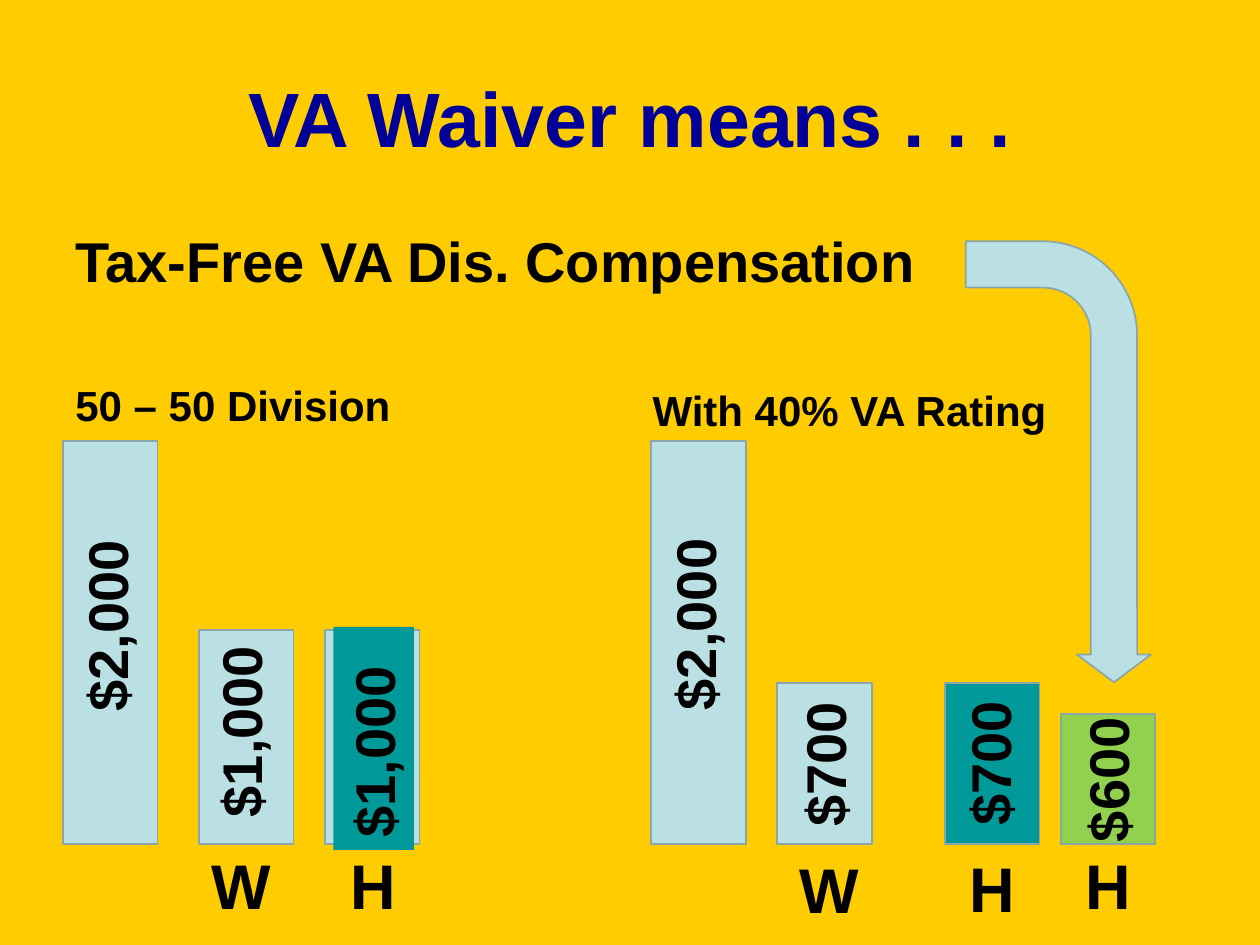
from typing import NamedTuple, Optional

from pptx import Presentation
from pptx.dml.color import RGBColor as Color
from pptx.enum.shapes import MSO_SHAPE as Kind
from pptx.enum.text import MSO_ANCHOR as Anchor, MSO_AUTO_SIZE as Fit, PP_ALIGN as Align
from pptx.util import Pt


class Theme:
    font = "Arial"
    back = Color.from_string("FFCC00")
    title = Color.from_string("000099")
    ink = Color.from_string("000000")
    pale = Color.from_string("BBE0E3")
    teal = Color.from_string("009999")
    green = Color.from_string("92D050")
    edge = Color.from_string("8AA6A8")
    head, lead, note, mark = 44, 32, 24, 36


class Bar(NamedTuple):
    left: float
    high: float
    fill: Color = Theme.pale


class Tag(NamedTuple):
    """Amount read upwards, placed by its centre."""
    text: str
    x: float
    y: float
    wide: float
    fill: Optional[Color] = None


class Note(NamedTuple):
    text: str
    left: float
    top: float
    wide: float
    high: float
    size: int
    color: Color = Theme.ink
    align: Align = Align.LEFT
    anchor: Anchor = Anchor.TOP
    wrap: bool = False


BASE, WIDE, TALL = 482.4, 54, 46

BARS = [
    Bar(36, 230.4), Bar(113.8, 122.4), Bar(185.8, 122.4),
    Bar(372.2, 230.4), Bar(444.2, 92.2),
    Bar(540, 92.2, Theme.teal), Bar(606.2, 74.2, Theme.green),
]
TAGS = [
    Tag("$2,000", 60.8, 357.1, 113), Tag("$2,000", 397.1, 356.4, 113),
    Tag("$1,000", 137.2, 417.6, 113), Tag("$700", 470.9, 436.3, 86.4),
    Tag("$700", 565.2, 435.6, 86.4), Tag("$600", 632.9, 445, 86.4),
    Tag("$1,000", 213.5, 421.9, 127.4, Theme.teal),
]
NOTES = [
    Note("VA Waiver means . . .", 36, 21.6, 648, 90, Theme.head,
         Theme.title, Align.CENTER, Anchor.MIDDLE, True),
    Note("Tax-Free VA Dis. Compensation", 36, 126, 648, 50, Theme.lead, wrap=True),
    Note("50 – 50 Division", 36, 213.1, 196.6, 36.7, Theme.note),
    Note("With 40% VA Rating", 365.8, 216, 241.9, 36.7, Theme.note),
    Note("W", 113.8, 480.2, 49, 51, Theme.mark),
    Note("H", 193, 480.2, 41, 51, Theme.mark),
    Note("W", 450, 482.4, 49, 51, Theme.mark),
    Note("H", 547.2, 481.7, 41, 51, Theme.mark),
    Note("H", 613.4, 480.2, 41, 51, Theme.mark),
]


def add_form(slide, kind: Kind, left: float, top: float, wide: float,
             high: float, fill: Color):
    form = slide.shapes.add_shape(kind, Pt(left), Pt(top), Pt(wide), Pt(high))
    form.shadow.inherit = False
    form.fill.solid()
    form.fill.fore_color.rgb = fill
    form.line.color.rgb = Theme.edge
    form.line.width = Pt(1)
    return form


def add_note(slide, note: Note):
    box = slide.shapes.add_textbox(Pt(note.left), Pt(note.top),
                                   Pt(note.wide), Pt(note.high))
    frame = box.text_frame
    frame.text = note.text
    frame.word_wrap = note.wrap
    frame.auto_size = Fit.NONE if note.wrap else Fit.SHAPE_TO_FIT_TEXT
    frame.vertical_anchor = note.anchor
    para = frame.paragraphs[0]
    para.alignment = note.align
    font = para.runs[0].font
    font.name, font.size, font.bold = Theme.font, Pt(note.size), True
    font.color.rgb = note.color
    return box


def add_tag(slide, tag: Tag) -> None:
    box = add_note(slide, Note(tag.text, tag.x - tag.wide / 2, tag.y - TALL / 2,
                               tag.wide, TALL, Theme.lead,
                               wrap=tag.fill is not None))
    box.rotation = 270
    if tag.fill is not None:
        box.fill.solid()
        box.fill.fore_color.rgb = tag.fill


def main() -> None:
    deck = Presentation()
    deck.slide_width, deck.slide_height = Pt(720), Pt(540)
    slide = deck.slides.add_slide(deck.slide_layouts[6])
    slide.background.fill.solid()
    slide.background.fill.fore_color.rgb = Theme.back

    # Bars stand on one base line
    for bar in BARS:
        add_form(slide, Kind.RECTANGLE, bar.left, BASE - bar.high,
                 WIDE, bar.high, bar.fill)

    # Amounts
    for tag in TAGS:
        add_tag(slide, tag)

    # Arrow from the compensation line to the last bar
    arrow = add_form(slide, Kind.BENT_ARROW, 478.8, 211, 252, 105.8, Theme.pale)
    arrow.rotation = 90
    for i, value in enumerate((0.25, 0.2, 0.15, 0.51)):
        arrow.adjustments[i] = value

    # Title, headings and party letters
    for note in NOTES:
        add_note(slide, note)

    deck.save("out.pptx")


if __name__ == "__main__":
    main()
